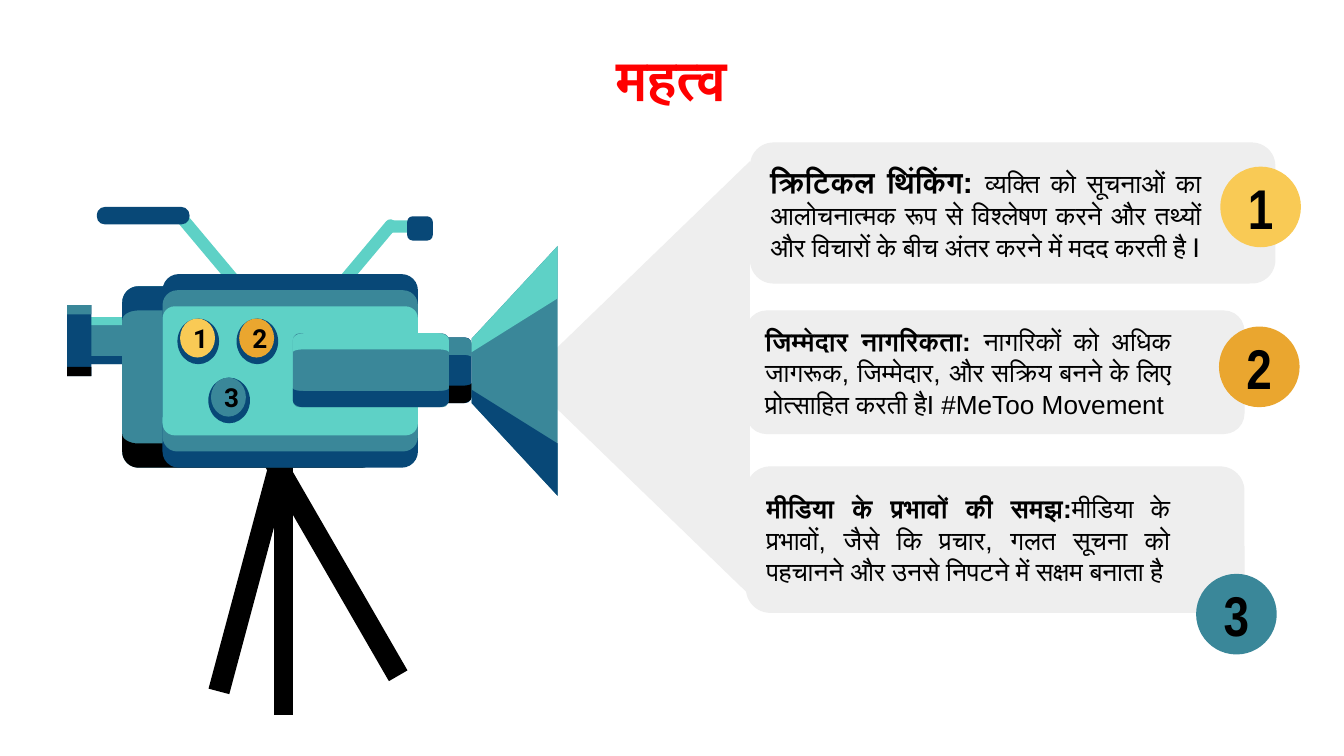
from math import cos, pi, sin

from pptx import Presentation
from pptx.dml.color import RGBColor
from pptx.enum.shapes import MSO_SHAPE
from pptx.enum.text import MSO_ANCHOR, PP_ALIGN
from pptx.util import Inches, Pt

RECT, ROUND = MSO_SHAPE.RECTANGLE, MSO_SHAPE.ROUNDED_RECTANGLE
OVAL, CONE = MSO_SHAPE.OVAL, MSO_SHAPE.ISOSCELES_TRIANGLE
LEFT, MID, FULL = PP_ALIGN.LEFT, PP_ALIGN.CENTER, PP_ALIGN.JUSTIFY
CENTRE = MSO_ANCHOR.MIDDLE

HUES = {
    "navy": "084877", "teal": "3A8799", "mint": "5ED1C6", "black": "000000",
    "grey": "EEEEEE", "gold": "F9CA55", "amber": "EAA62F", "red": "FF0000",
}


def hue(name):
    return RGBColor.from_string(HUES[name])


def run(text, size=14, font="Arial", bold=False, color="black"):
    return dict(text=text, size=size, font=font, bold=bold, color=color)


def write(shape, runs, align=MID, pads=(0.1, 0.1, 0.1, 0.1)):
    """Fill a shape with one paragraph; pads are left, top, right, bottom."""
    frame = shape.text_frame
    frame.word_wrap = True
    frame.vertical_anchor = CENTRE
    (frame.margin_left, frame.margin_top,
     frame.margin_right, frame.margin_bottom) = map(Inches, pads)
    para = frame.paragraphs[0]
    para.alignment = align
    for item in runs:
        part = para.add_run()
        part.text = item["text"]
        part.font.size = Pt(item["size"])
        part.font.name = item["font"]
        part.font.bold = item["bold"]
        part.font.color.rgb = hue(item["color"])


class Deck:
    def __init__(self, wide, high):
        self.show = Presentation()
        self.show.slide_width = Inches(wide)
        self.show.slide_height = Inches(high)
        self.slide = self.show.slides.add_slide(self.show.slide_layouts[6])

    def paint(self, shape, color):
        shape.shadow.inherit = False
        shape.fill.solid()
        shape.fill.fore_color.rgb = hue(color)
        shape.line.fill.background()
        return shape

    def block(self, x, y, w, h, color, kind=RECT, turn=0, radius=None):
        shape = self.slide.shapes.add_shape(
            kind, Inches(x), Inches(y), Inches(w), Inches(h))
        shape.rotation = turn
        if radius is not None:
            shape.adjustments[0] = radius / min(w, h)
        return self.paint(shape, color)

    def poly(self, points, color):
        spots = [(Inches(x), Inches(y)) for x, y in points]
        pen = self.slide.shapes.build_freeform(*spots[0])
        pen.add_line_segments(spots[1:], close=True)
        return self.paint(pen.convert_to_shape(), color)

    def cap(self, x, edge, w, h, rx, ry, dip, color):
        """Band hugging a rounded edge; a negative h grows upwards."""
        way = 1 if h > 0 else -1
        steps = [i * pi / 16 for i in range(9)]
        outer = [(rx - rx * cos(a), edge + way * (ry - ry * sin(a)))
                 for a in steps]
        inner = [(rx - rx * cos(a), edge + h - way * dip * sin(a))
                 for a in steps]
        ring = [(x + a, b) for a, b in outer]
        ring += [(x + w - a, b) for a, b in outer[::-1]]
        ring += [(x + w - a, b) for a, b in inner]
        ring += [(x + a, b) for a, b in inner[::-1]]
        return self.poly(ring, color)

    def barrel(self, x, y, w, h, rx, ry, band, dip, colors):
        """Rounded body with a cap along its top and bottom."""
        body, top, base = colors
        self.block(x, y, w, h, body, ROUND, radius=ry)
        self.cap(x, y + h, w, -band, rx, ry, dip, base)
        self.cap(x, y, w, band, rx, ry, dip, top)

    def label(self, x, y, w, h, runs):
        write(self.slide.shapes.add_textbox(
            Inches(x), Inches(y), Inches(w), Inches(h)), runs)

    def save(self):
        self.show.save("out.pptx")


def camera(deck):
    # Tripod
    for mid, size, thick, turn in ((2.11, 2.6, 0.14, 90),
                                   (2.38, 2.33, 0.16, 60),
                                   (1.93, 2.33, 0.16, 105)):
        deck.block(mid - size / 2, 4.02 - thick / 2, size, thick, "black",
                   turn=turn)
    # Handles
    deck.block(1.16, 1.8, 0.76, 0.09, "mint", ROUND, 50, 0.04)
    deck.block(0.72, 1.54, 0.69, 0.13, "navy", ROUND, radius=0.06)
    deck.block(2.31, 1.89, 0.76, 0.09, "mint", ROUND, -50, 0.04)
    deck.block(2.86, 1.64, 0.25, 0.09, "mint", ROUND, radius=0.04)
    deck.block(3.03, 1.61, 0.19, 0.18, "navy", ROUND, radius=0.04)
    # Eyepiece tube and rear body
    deck.barrel(0.63, 2.36, 0.78, 0.35, 0.05, 0.03, 0.07, 0.01,
                ("teal", "mint", "navy"))
    deck.barrel(0.91, 2.13, 1.9, 1.35, 0.12, 0.12, 0.25, 0.07,
                ("teal", "navy", "black"))
    # Front body
    for y, h, radius, color in ((2.04, 1.44, 0.12, "navy"),
                                (2.16, 1.2, 0.11, "teal"),
                                (2.28, 0.96, 0.09, "mint")):
        deck.block(1.21, y, 1.9, h, color, ROUND, radius=radius)
    # Lens
    deck.barrel(2.51, 2.51, 1, 0.49, 0.07, 0.05, 0.15, 0.02,
                ("navy", "teal", "black"))
    deck.barrel(2.18, 2.48, 1.16, 0.55, 0.08, 0.05, 0.14, 0.02,
                ("teal", "mint", "navy"))
    # Hood
    near, far = 3.51, 4.15
    deck.poly([(near, 2.52), (far, 1.83), (far, 3.69), (near, 3)], "teal")
    deck.poly([(near, 2.9), (far, 3.3), (far, 3.69), (near, 3)], "navy")
    deck.poly([(near, 2.62), (far, 2.22), (far, 1.83), (near, 2.52)], "mint")
    # Eyecup
    for y, h, color in ((2.27, 0.53, "navy"), (2.73, 0.07, "black"),
                        (2.27, 0.07, "teal")):
        deck.block(0.5, y, 0.18, h, color)
    # Numbered buttons
    for num, x, y, color in (("1", 1.32, 2.37, "gold"),
                             ("2", 1.76, 2.37, "amber"),
                             ("3", 1.55, 2.81, "teal")):
        deck.block(x, y, 0.31, 0.34, "navy", OVAL)
        knob = deck.block(x + 0.02, y, 0.26, 0.29, color, OVAL)
        write(knob, [run(num, font="Roboto", bold=True)], LEFT,
              (0.06, 0, 0, 0))


def points(deck):
    cards = (
        (5.58, 1.06, 3.91, 1.05,
         run("क्रिटिकल थिंकिंग: ", 16, bold=True),
         run("व्यक्ति को सूचनाओं का आलोचनात्मक रूप से विश्लेषण करने और तथ्यों "
             "और विचारों के बीच अंतर करने में मदद करती है I", font="Roboto")),
        (5.55, 2.31, 3.71, 0.92,
         run("जिम्मेदार नागरिकता:", bold=True),
         run(" नागरिकों को अधिक जागरूक, जिम्मेदार, और सक्रिय बनने के लिए "
             "प्रोत्साहित करती हैI #MeToo Movement")),
        (5.55, 3.47, 3.71, 1.09,
         run("मीडिया के प्रभावों की समझ:", bold=True),
         run("मीडिया के प्रभावों, जैसे कि प्रचार, गलत सूचना को पहचानने और "
             "उनसे निपटने में सक्षम बनाता है")),
    )
    for x, y, w, h, head, body in cards:
        card = deck.block(x, y, w, h, "grey", ROUND, radius=h / 6)
        write(card, [head, body], FULL, (0.1, 0.1, 0.5, 0.1))
    # Number badges
    for num, x, y, color in (("1", 9.08, 1.24, "gold"),
                             ("2", 9.07, 2.43, "amber"),
                             ("3", 8.9, 4.27, "teal")):
        badge = deck.block(x, y, 0.6, 0.6, color, OVAL)
        write(badge, [run(num, 30, "Arial Narrow", True)], MID, (0, 0, 0, 0))


def main():
    # Widescreen, 16 to 9
    deck = Deck(10, 10 * 9 / 16)
    # Light beam and title
    deck.block(3.13, 1.98, 3.23, 1.67, "grey", CONE, 270)
    deck.label(1.4, 0.32, 7.2, 0.53, [run("महत्व", 30, "Roboto", True, "red")])
    camera(deck)
    points(deck)
    deck.save()


if __name__ == "__main__":
    main()
